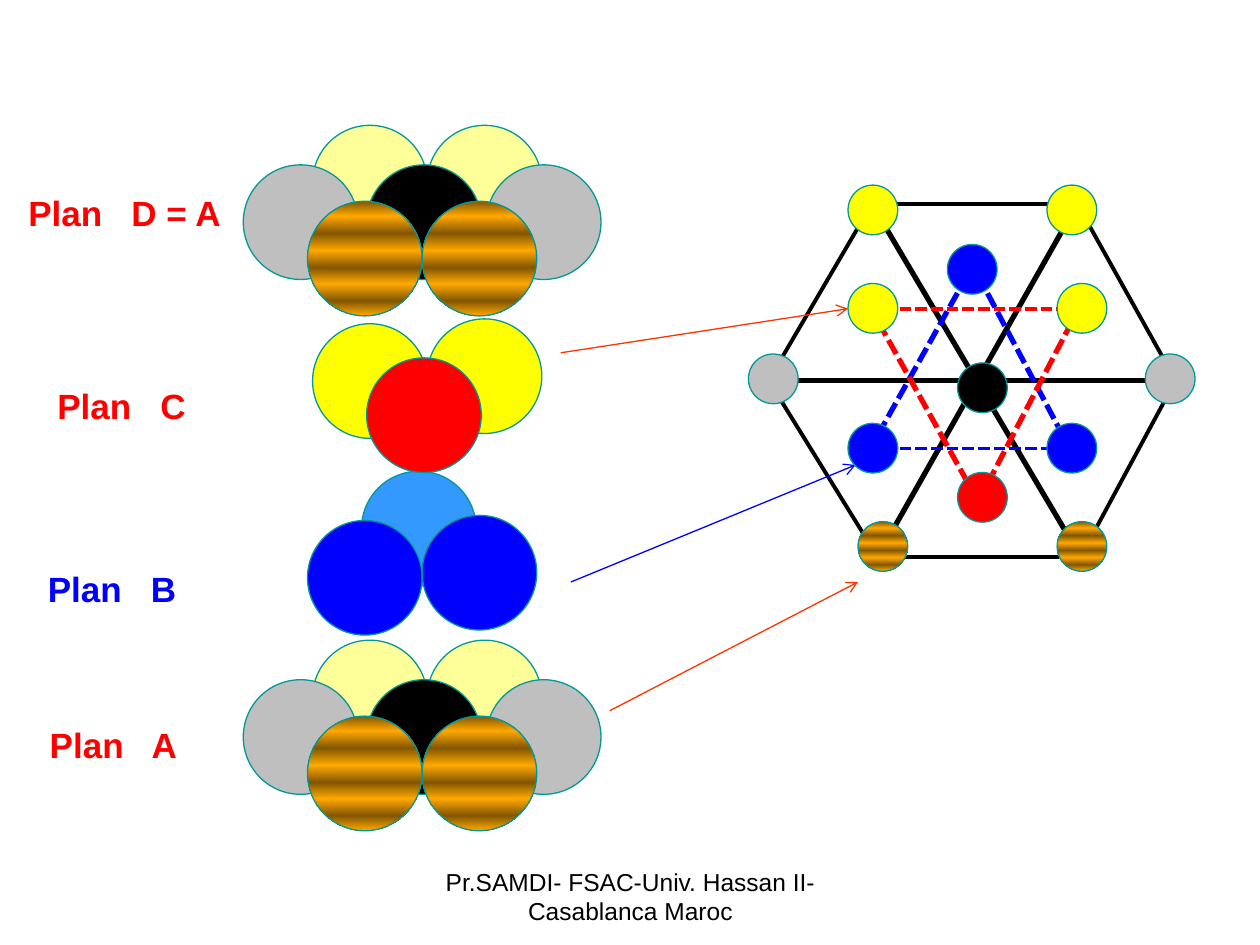
"""Build the slide on ABC stacking of close-packed planes, side and top views."""
from dataclasses import dataclass

from pptx import Presentation
from pptx import util as u
from pptx.dml.color import RGBColor
from pptx.enum import dml, shapes, text
from pptx.oxml.ns import qn
from lxml import etree


@dataclass(frozen=True)
class Theme:
    font: str = "Arial"
    label_size: float = 20
    footer_size: float = 14
    white: str = "FFFFFF"
    black: str = "000000"
    gray: str = "BFBFBF"
    cream: str = "FFFF99"
    yellow: str = "FFFF00"
    red: str = "FF0000"
    blue: str = "0000FF"
    sky: str = "3399FF"
    orange: str = "FF3300"
    teal: str = "009999"
    brown: str = "825600"
    gold: str = "FFA800"
    thin: float = 0.75
    medium: float = 2.25
    thick: float = 3


THEME = Theme()
STRIPES = "stripes"
STRIPE_STOPS = (0, 13, 28, 43, 58, 72, 87, 100)
BALL, ATOM = 65.5, 28.4
LABEL_HEIGHT = 31.7

PLANE_A = [
    (THEME.cream, 178.6, 0), (THEME.cream, 244.1, 0),
    (THEME.black, 209.5, 22.6), (THEME.gray, 139, 22.6), (THEME.gray, 277.9, 22.6),
    (STRIPES, 175.7, 43.4), (STRIPES, 241.2, 43.4),
]
PLANE_B = [(THEME.sky, 206.6, 0), (THEME.blue, 175.7, 28.1), (THEME.blue, 241.2, 25.2)]
PLANE_C = [(THEME.yellow, 178.6, 2.8), (THEME.yellow, 244.1, 0), (THEME.red, 209.5, 22.3)]
STACK = [(365.8, PLANE_A), (269.3, PLANE_B), (71.6, PLANE_A), (182.2, PLANE_C)]

LABELS = [
    ("Plan   A", THEME.red, 20.9, 409.7, 87.8),
    ("Plan   B", THEME.blue, 20.2, 320.4, 87.8),
    ("Plan   C", THEME.red, 25.2, 216, 88.6),
    ("Plan   D = A", THEME.red, 8.6, 105.8, 125.3),
]
FOOTER = "Pr.SAMDI- FSAC-Univ. Hassan II- Casablanca Maroc"

HEXAGON = [(498.2, 116.6), (615.6, 116.6), (671.8, 217.4),
           (617.5, 318.2), (501.5, 318.2), (439.2, 217.4)]
HEXAGON_ATOMS = [
    (THEME.black, 547.2, 207.4), (THEME.gray, 427.7, 202.3), (THEME.gray, 654.5, 202.3),
    (STRIPES, 604.1, 298.1), (STRIPES, 490.3, 298.1),
    (THEME.yellow, 598.3, 105.8), (THEME.yellow, 484.6, 105.8),
]
ARROWS = [
    (THEME.orange, (348.5, 406.1), (490.3, 332.6)),
    (THEME.blue, (326.2, 332.6), (488.9, 265.7)),
    (THEME.orange, (320.4, 201.6), (484.6, 176.4)),
]
TRIANGLES = [
    (THEME.blue,
     [((553, 157), (496.1, 258.5)), ((496.1, 256.3), (613.4, 256.3)),
      ((558.7, 157), (611.3, 256.3))],
     [(THEME.blue, 541.4, 139.7), (THEME.blue, 598.3, 241.9), (THEME.blue, 484.6, 241.9)]),
    (THEME.red,
     [((553, 275.8), (496.1, 173.5)), ((496.1, 176.4), (613.4, 176.4)),
      ((558.7, 287.3), (614.9, 179.3))],
     [(THEME.red, 547.2, 270), (THEME.yellow, 604.1, 162), (THEME.yellow, 484.6, 162)]),
]


def points(*values):
    return [u.Pt(value) for value in values]


def rgb(color):
    return RGBColor.from_string(color)


def fill_stripes(shape):
    shape.fill.gradient()
    shape.fill.gradient_angle = 270
    stops = shape._element.spPr.find(".//" + qn("a:gsLst"))
    for stop in list(stops):
        stops.remove(stop)
    for index, position in enumerate(STRIPE_STOPS):
        stop = etree.SubElement(stops, qn("a:gs"), pos=str(position * 1000))
        color = THEME.gold if index % 2 else THEME.brown
        etree.SubElement(stop, qn("a:srgbClr"), val=color)


def add_balls(parent, balls, size, top=0):
    for color, x, y in balls:
        ball = parent.shapes.add_shape(
            shapes.MSO_SHAPE.OVAL, *points(x, top + y, size, size))
        ball.shadow.inherit = False
        if color == STRIPES:
            fill_stripes(ball)
        else:
            ball.fill.solid()
            ball.fill.fore_color.rgb = rgb(color)
        ball.line.color.rgb = rgb(THEME.teal)
        ball.line.width = u.Pt(THEME.thin)


def add_line(parent, start, end, color, width, dashed=False, arrow=False):
    line = parent.shapes.add_connector(
        shapes.MSO_CONNECTOR.STRAIGHT, *points(*start, *end))
    line.line.color.rgb = rgb(color)
    line.line.width = u.Pt(width)
    if dashed:
        line.line.dash_style = dml.MSO_LINE.SQUARE_DOT
    properties = line._element.spPr
    if arrow:
        etree.SubElement(properties.find(qn("a:ln")), qn("a:tailEnd"), type="arrow")
    etree.SubElement(properties, qn("a:effectLst"))


def write(box, words, size, color, bold=False):
    para = box.text_frame.paragraphs[0]
    para.text = words
    para.alignment = text.PP_ALIGN.CENTER
    font = para.runs[0].font
    font.name, font.size, font.bold = THEME.font, u.Pt(size), bold
    font.color.rgb = rgb(color)


def add_label(page, words, color, x, y, width):
    box = page.shapes.add_shape(
        shapes.MSO_SHAPE.RECTANGLE, *points(x, y, width, LABEL_HEIGHT))
    box.shadow.inherit = False
    box.fill.solid()
    box.fill.fore_color.rgb = rgb(THEME.white)
    box.line.fill.background()
    frame = box.text_frame
    frame.word_wrap = False
    frame.auto_size = text.MSO_AUTO_SIZE.SHAPE_TO_FIT_TEXT
    frame.vertical_anchor = text.MSO_ANCHOR.MIDDLE
    write(box, words, THEME.label_size, color, bold=True)


def add_hexagon(page):
    group = page.shapes.add_group_shape()
    for index, corner in enumerate(HEXAGON):
        add_line(group, corner, HEXAGON[(index + 1) % 6], THEME.black, THEME.medium)
    for corner, opposite in zip(HEXAGON[:3], HEXAGON[3:]):
        add_line(group, corner, opposite, THEME.black, THEME.thick)
    add_balls(page.shapes.add_group_shape(), HEXAGON_ATOMS, ATOM)


def main():
    deck = Presentation()
    deck.slide_width, deck.slide_height = points(720, 540)
    page = deck.slides.add_slide(deck.slide_layouts[6])

    for top, balls in STACK:
        add_balls(page.shapes.add_group_shape(), balls, BALL, top)
    for label in LABELS:
        add_label(page, *label)

    add_hexagon(page)
    for color, start, end in ARROWS:
        add_line(page, start, end, color, THEME.thin, arrow=True)
    for color, sides, atoms in TRIANGLES:
        group = page.shapes.add_group_shape()
        for start, end in sides:
            width = THEME.medium if start[1] == end[1] else THEME.thick
            add_line(group, start, end, color, width, dashed=True)
        add_balls(group, atoms, ATOM)

    footer = page.shapes.add_textbox(*points(246.2, 491.8, 228.2, 37.4))
    footer.text_frame.word_wrap = True
    write(footer, FOOTER, THEME.footer_size, THEME.black)
    deck.save("out.pptx")


if __name__ == "__main__":
    main()
